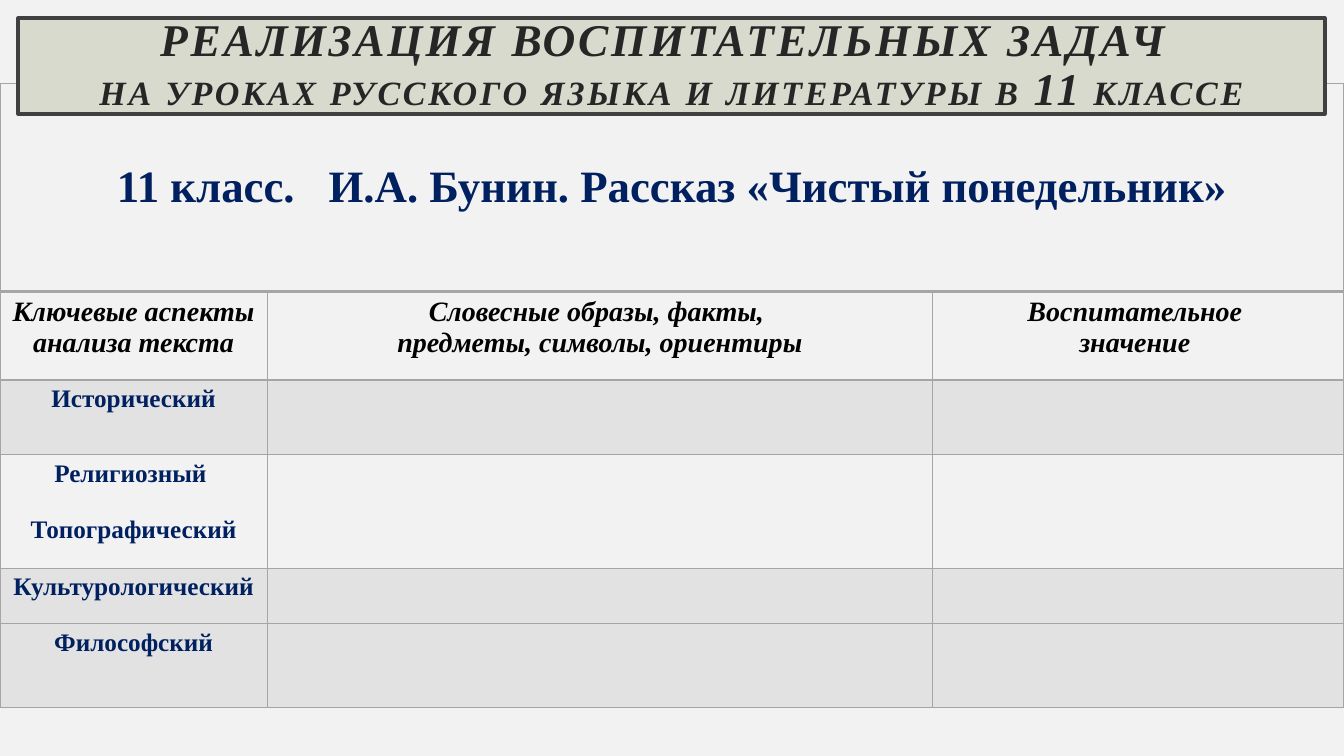
from dataclasses import dataclass

from lxml import etree
from pptx import Presentation
from pptx.dml.color import RGBColor
from pptx.enum.text import MSO_ANCHOR, MSO_AUTO_SIZE, PP_ALIGN
from pptx.oxml.ns import qn
from pptx.util import Inches, Pt

CENTER = PP_ALIGN.CENTER
TOP, MIDDLE = MSO_ANCHOR.TOP, MSO_ANCHOR.MIDDLE
TITLE_ONLY = 5


@dataclass(frozen=True)
class Theme:
    font: str = "Times New Roman"
    page: str = "F2F2F2"
    title_fill: str = "D7DACD"
    title_line: str = "404040"
    title_text: str = "262626"
    navy: str = "002060"
    black: str = "000000"
    grid: str = "A5A5A5"
    band: str = "E2E2E2"
    title_large: float = 32.4
    title_small: float = 24.3
    topic: float = 32
    heading: float = 20
    aspect: float = 18
    thin: float = 0.96
    thick: float = 1.98
    title_border: float = 2.5
    title_tracking: float = 2
    topic_gap: float = 16
    paragraph_gap: float = 20


THEME = Theme()

COLUMN_WIDTHS = (2.65, 6.6, 4.08)
ROW_HEIGHTS = (2.06, 0.88, 0.74, 1.13, 0.55, 0.83)
HEADINGS = (
    ("Ключевые аспекты анализа текста",),
    ("Словесные образы, факты, ", "предметы, символы, ориентиры"),
    ("Воспитательное ", "значение "),
)
# Each row: its aspects, and whether it is shaded
ASPECT_ROWS = (
    (("Исторический",), True),
    (("Религиозный ", "Топографический"), False),
    (("Культурологический",), True),
    (("Философский",), True),
)


def rgb(value):
    return RGBColor.from_string(value)


def style_paragraph(para, size, color, italic=False):
    para.alignment = CENTER
    font = para.font
    font.name, font.size = THEME.font, Pt(size)
    font.bold, font.italic = True, italic
    font.color.rgb = rgb(color)


def add_span(para, text, size=None, tracking=None):
    """Add a run; tracking is extra letter spacing in points."""
    span = para.add_run()
    span.text = text
    if size:
        span.font.size = Pt(size)
    if tracking:
        span.font._element.set("spc", str(int(tracking * 100)))


def add_title(page):
    box = page.shapes.title
    box.left, box.top = Inches(0.18), Inches(0.18)
    box.width, box.height = Inches(12.96), Inches(0.95)
    box.fill.solid()
    box.fill.fore_color.rgb = rgb(THEME.title_fill)
    box.line.color.rgb = rgb(THEME.title_line)
    box.line.width = Pt(THEME.title_border)
    frame = box.text_frame
    frame.word_wrap, frame.auto_size = True, MSO_AUTO_SIZE.NONE
    frame.vertical_anchor = MIDDLE
    frame.margin_left = frame.margin_right = Inches(0.2)
    frame.margin_top = frame.margin_bottom = Inches(0.2)

    para = frame.paragraphs[0]
    style_paragraph(para, THEME.title_large, THEME.title_text, italic=True)
    para.line_spacing = 0.9
    tracking = THEME.title_tracking
    add_span(para, "РЕАЛИЗАЦИЯ ВОСПИТАТЕЛЬНЫХ ЗАДАЧ ", tracking=tracking)
    para.add_line_break()
    add_span(para, "НА УРОКАХ РУССКОГО ЯЗЫКА И ЛИТЕРАТУРЫ В ", THEME.title_small, tracking)
    add_span(para, "11", tracking=tracking)
    add_span(para, " КЛАССЕ", THEME.title_small, tracking)
    # The title overlaps the table, so it goes to the front
    page.shapes._spTree.append(box._element)


def set_borders(cell, top, bottom):
    properties = cell._tc.get_or_add_tcPr()
    widths = {"L": THEME.thin, "R": THEME.thin, "T": top, "B": bottom}
    for side, width in widths.items():
        line = etree.SubElement(properties, qn(f"a:ln{side}"), w=str(int(Pt(width))))
        fill = etree.SubElement(line, qn("a:solidFill"))
        etree.SubElement(fill, qn("a:srgbClr"), val=THEME.grid)


def format_cell(cell, row, shaded):
    top = THEME.thick if row in (1, 2) else THEME.thin
    bottom = THEME.thick if row in (0, 1) else THEME.thin
    set_borders(cell, top, bottom)
    if shaded:
        cell.fill.solid()
        cell.fill.fore_color.rgb = rgb(THEME.band)
    else:
        cell.fill.background()
    cell.vertical_anchor = TOP


def write_cell(cell, lines, size, color, italic=False, gap=0):
    frame = cell.text_frame
    for index, text in enumerate(lines):
        para = frame.add_paragraph() if index else frame.paragraphs[0]
        style_paragraph(para, size, color, italic)
        if index:
            para.space_before = Pt(gap)
        add_span(para, text)


def write_topic(cell):
    cell.vertical_anchor = MIDDLE
    para = cell.text_frame.paragraphs[0]
    style_paragraph(para, THEME.topic, THEME.navy)
    add_span(para, "11 класс.")
    add_span(para, " ", tracking=THEME.topic_gap)
    add_span(para, "И.А. Бунин. Рассказ «Чистый понедельник»")


def add_aspect_table(page):
    table = page.shapes.add_table(
        len(ROW_HEIGHTS), len(COLUMN_WIDTHS), Inches(0), Inches(0.83),
        Inches(sum(COLUMN_WIDTHS)), Inches(sum(ROW_HEIGHTS))).table
    table.first_row = table.horz_banding = False
    for column, width in zip(table.columns, COLUMN_WIDTHS):
        column.width = Inches(width)
    shading = [False, False] + [shaded for _, shaded in ASPECT_ROWS]
    for index, (row, height) in enumerate(zip(table.rows, ROW_HEIGHTS)):
        row.height = Inches(height)
        for cell in row.cells:
            format_cell(cell, index, shading[index])

    table.cell(0, 0).merge(table.cell(0, len(COLUMN_WIDTHS) - 1))
    write_topic(table.cell(0, 0))
    for column, lines in enumerate(HEADINGS):
        write_cell(table.cell(1, column), lines, THEME.heading, THEME.black, italic=True)
    for row, (aspects, _) in enumerate(ASPECT_ROWS, start=2):
        write_cell(table.cell(row, 0), aspects, THEME.aspect, THEME.navy,
                   gap=THEME.paragraph_gap)


def main():
    deck = Presentation()
    deck.slide_width, deck.slide_height = Inches(13.33), Inches(7.5)
    page = deck.slides.add_slide(deck.slide_layouts[TITLE_ONLY])
    page.background.fill.solid()
    page.background.fill.fore_color.rgb = rgb(THEME.page)
    add_aspect_table(page)
    add_title(page)
    deck.save("out.pptx")


if __name__ == "__main__":
    main()
